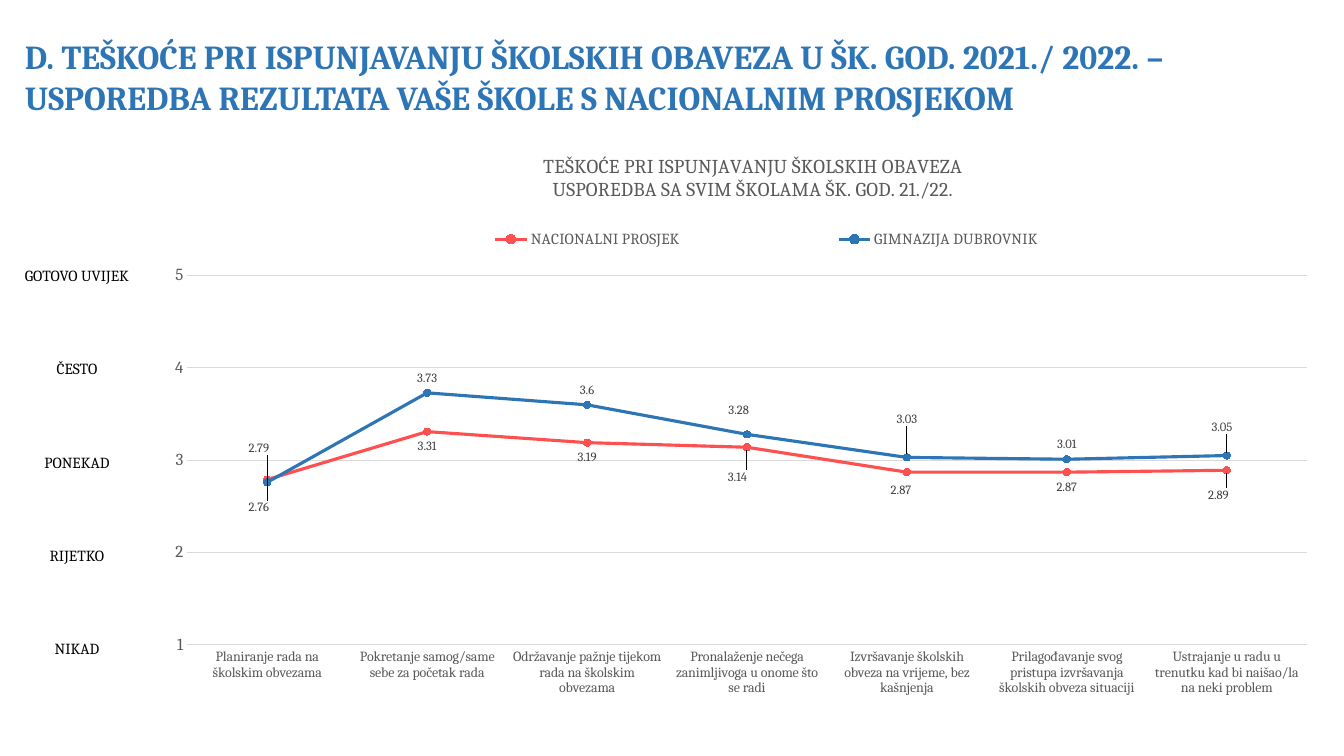
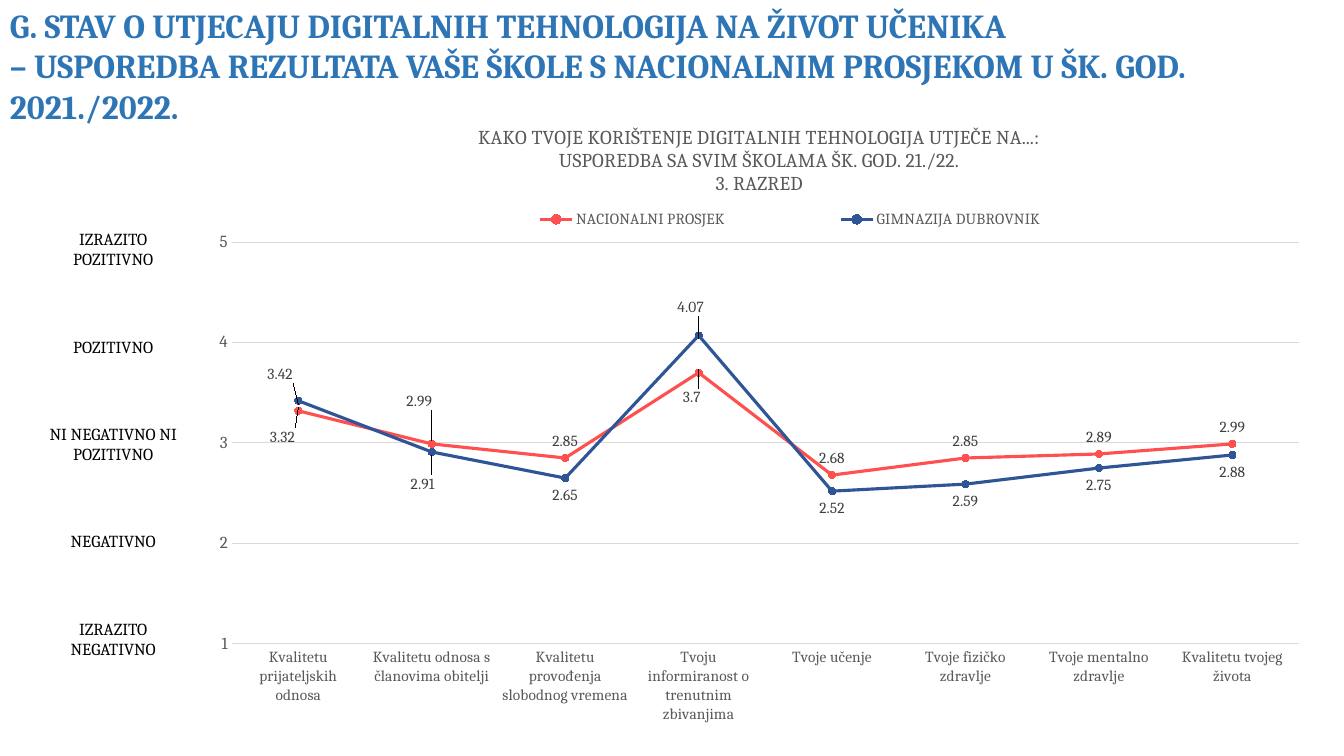
"""Build two survey slides comparing a school's results with the national average."""
from dataclasses import dataclass

from pptx import Presentation
from pptx.chart.chart import Chart
from pptx.chart.data import CategoryChartData
from pptx.chart.series import LineSeries
from pptx.dml.color import RGBColor
from pptx.enum.chart import (XL_CHART_TYPE, XL_LABEL_POSITION, XL_LEGEND_POSITION,
                             XL_MARKER_STYLE, XL_TICK_MARK)
from pptx.enum.text import MSO_AUTO_SIZE, PP_ALIGN
from pptx.oxml import parse_xml
from pptx.oxml.ns import nsdecls, qn
from pptx.slide import Slide
from pptx.text.text import Font
from pptx.util import Cm, Pt

LINE_MARKERS = XL_CHART_TYPE.LINE_MARKERS
ABOVE, BELOW = XL_LABEL_POSITION.ABOVE, XL_LABEL_POSITION.BELOW
LEGEND_TOP = XL_LEGEND_POSITION.TOP
CIRCLE = XL_MARKER_STYLE.CIRCLE
NO_TICK = XL_TICK_MARK.NONE
GROW = MSO_AUTO_SIZE.SHAPE_TO_FIT_TEXT
LEFT, CENTER = PP_ALIGN.LEFT, PP_ALIGN.CENTER


@dataclass(frozen=True)
class Theme:
    font: str = "Cambria"
    blue: str = "2E75B6"
    navy: str = "2F5597"
    red: str = "FF5050"
    black: str = "000000"
    chart_text: str = "595959"
    label_text: str = "404040"
    grid: str = "D9D9D9"
    title_size: float = 24
    chart_title_size: float = 14
    legend_size: float = 11
    value_axis_size: float = 12
    line_width: float = 2.25
    grid_width: float = 0.75
    marker_size: int = 5


THEME = Theme()


@dataclass(frozen=True)
class Box:
    left: float
    top: float
    width: float
    height: float

    def lengths(self) -> tuple[Cm, Cm, Cm, Cm]:
        return Cm(self.left), Cm(self.top), Cm(self.width), Cm(self.height)


@dataclass(frozen=True)
class Scale:
    box: Box
    words: tuple[str, ...]
    size: float
    gap: float


@dataclass(frozen=True)
class Line:
    name: str
    color: str
    values: tuple[float, ...]
    position: XL_LABEL_POSITION
    label_shifts: dict[int, tuple[float, float]]


@dataclass(frozen=True)
class LineChart:
    """Layout values and label shifts are percentages of the chart frame."""
    box: Box
    title: str
    title_layout: tuple[float, ...]
    legend_layout: tuple[float, ...]
    plot_layout: tuple[float, ...]
    categories: tuple[str, ...]
    category_size: float
    label_size: float
    lines: tuple[Line, ...]


@dataclass(frozen=True)
class Page:
    title: str
    title_box: Box
    scale: Scale
    chart: LineChart


NATIONAL, SCHOOL = "NACIONALNI PROSJEK", "GIMNAZIJA DUBROVNIK"

PAGES = (
    Page(
        "D. TEŠKOĆE PRI ISPUNJAVANJU ŠKOLSKIH OBAVEZA U ŠK. GOD. 2021./ 2022. – "
        "USPOREDBA REZULTATA VAŠE ŠKOLE S NACIONALNIM PROSJEKOM",
        Box(0.38, 0.79, 31.7, 2.31),
        Scale(Box(0, 6.58, 3.88, 10.24),
              ("GOTOVO UVIJEK", "ČESTO", "PONEKAD", "RIJETKO", "NIKAD"), 11, 53.5),
        LineChart(
            Box(3.91, 3.23, 29.95, 15.82),
            "TEŠKOĆE PRI ISPUNJAVANJU ŠKOLSKIH OBAVEZA\n"
            "USPOREDBA SA SVIM ŠKOLAMA ŠK. GOD. 21./22.",
            (32.4, 3.5), (15.7, 14.7, 71.5, 6), (2.7, 23.5, 94.2, 58.8),
            ("Planiranje rada na školskim obvezama",
             "Pokretanje samog/same sebe za početak rada",
             "Održavanje pažnje tijekom rada na školskim obvezama",
             "Pronalaženje nečega zanimljivoga u onome što se radi",
             "Izvršavanje školskih obveza na vrijeme, bez kašnjenja",
             "Prilagođavanje svog pristupa izvršavanja školskih obveza situaciji",
             "Ustrajanje u radu u trenutku kad bi naišao/la na neki problem"),
            10, 9,
            (Line(NATIONAL, THEME.red, (2.79, 3.31, 3.19, 3.14, 2.87, 2.87, 2.89), BELOW,
                  {0: (-0.7, -7.3), 3: (-0.8, 2.4), 4: (-0.5, 0.5), 6: (-0.7, 1.6)}),
             Line(SCHOOL, THEME.blue, (2.76, 3.73, 3.6, 3.28, 3.03, 3.01, 3.05), ABOVE,
                  {0: (-0.7, 6.4), 3: (-0.7, -1.4), 4: (0, -3.7), 6: (-0.4, -2.2)})),
        ),
    ),
    Page(
        "G. STAV O UTJECAJU DIGITALNIH TEHNOLOGIJA NA ŽIVOT UČENIKA\n"
        "– USPOREDBA REZULTATA VAŠE ŠKOLE S NACIONALNIM PROSJEKOM U ŠK. GOD. 2021./2022.",
        Box(0, 0, 31.7, 3.33),
        Scale(Box(0.99, 5.64, 3.73, 11.2),
              ("IZRAZITO POZITIVNO", "POZITIVNO", "NI NEGATIVNO NI POZITIVNO",
               "NEGATIVNO", "IZRAZITO NEGATIVNO"), 12, 48),
        LineChart(
            Box(4.72, 2.64, 28.68, 15.8),
            "KAKO TVOJE KORIŠTENJE DIGITALNIH TEHNOLOGIJA UTJEČE NA...:\n"
            "USPOREDBA SA SVIM ŠKOLAMA ŠK. GOD. 21./22.\n3. RAZRED",
            (25.3, 2.7), (21.3, 15.3, 63.4, 6), (3.9, 21.9, 93.8, 64.1),
            ("Kvalitetu prijateljskih odnosa",
             "Kvalitetu odnosa s članovima obitelji",
             "Kvalitetu provođenja slobodnog vremena",
             "Tvoju informiranost o trenutnim zbivanjima",
             "Tvoje učenje",
             "Tvoje fizičko zdravlje",
             "Tvoje mentalno zdravlje",
             "Kvalitetu tvojeg života"),
            11, 11,
            (Line(NATIONAL, THEME.red, (3.32, 2.99, 2.85, 3.7, 2.68, 2.85, 2.89, 2.99), ABOVE,
                  {0: (-1.4, 6.9), 1: (-1.1, -4.1), 3: (-0.6, 6.7)}),
             Line(SCHOOL, THEME.navy, (3.42, 2.91, 2.65, 4.07, 2.52, 2.59, 2.75, 2.88), BELOW,
                  {0: (-1.6, -7), 1: (-0.8, 2.4), 3: (-0.7, -7.2)})),
        ),
    ),
)


def style_font(font: Font, size: float, color: str, bold: bool = False) -> None:
    font.name = THEME.font
    font.size = Pt(size)
    font.bold = bold
    font.color.rgb = RGBColor.from_string(color)


def add_text(slide: Slide, box: Box, text: str, size: float, color: str,
             bold: bool = False, alignment: PP_ALIGN = LEFT, gap: float = 0) -> None:
    text_frame = slide.shapes.add_textbox(*box.lengths()).text_frame
    text_frame.word_wrap = True
    text_frame.auto_size = GROW
    text_frame.text = text
    for index, paragraph in enumerate(text_frame.paragraphs):
        paragraph.alignment = alignment
        paragraph.space_before = Pt(gap if index else 0)
        for run in paragraph.runs:
            style_font(run.font, size, color, bold)


def set_layout(parent, index: int, percents: tuple[float, ...],
               edge: bool = True, inner: bool = False) -> None:
    for layout in parent.findall(qn("c:layout")):
        parent.remove(layout)
    target = '<c:layoutTarget val="inner"/>' if inner else ""
    modes = '<c:xMode val="edge"/><c:yMode val="edge"/>' if edge else ""
    values = "".join(f'<c:{tag} val="{percent / 100:.3f}"/>'
                     for tag, percent in zip("xywh", percents))
    parent.insert(index, parse_xml(
        f'<c:layout {nsdecls("c")}><c:manualLayout>{target}{modes}{values}'
        '</c:manualLayout></c:layout>'))


def style_series(series: LineSeries, line: Line, label_size: float) -> None:
    color = RGBColor.from_string(line.color)
    series.smooth = False
    series.format.line.width = Pt(THEME.line_width)
    series.format.line.color.rgb = color
    series.marker.style = CIRCLE
    series.marker.size = THEME.marker_size
    series.marker.format.fill.solid()
    series.marker.format.fill.fore_color.rgb = color
    series.marker.format.line.color.rgb = color
    labels = series.data_labels
    labels.show_value = True
    labels.position = line.position
    style_font(labels.font, label_size, THEME.label_text)
    for index, shift in line.label_shifts.items():
        label = series.points[index].data_label
        style_font(label.font, label_size, THEME.label_text)
        label.position = line.position
        element = labels._element.xpath(f'c:dLbl[c:idx/@val="{index}"]')[0]
        set_layout(element, 1, shift, edge=False)


def style_axes(chart: Chart, category_size: float) -> None:
    grid_color = RGBColor.from_string(THEME.grid)
    category_axis, value_axis = chart.category_axis, chart.value_axis
    value_axis.minimum_scale, value_axis.maximum_scale = 1, 5
    value_axis.major_unit = 1
    value_axis.has_major_gridlines = True
    for line in (category_axis.format.line, value_axis.major_gridlines.format.line):
        line.color.rgb = grid_color
        line.width = Pt(THEME.grid_width)
    value_axis.format.line.fill.background()
    for axis, size in ((category_axis, category_size), (value_axis, THEME.value_axis_size)):
        axis.major_tick_mark = axis.minor_tick_mark = NO_TICK
        style_font(axis.tick_labels.font, size, THEME.chart_text)


def add_line_chart(slide: Slide, content: LineChart) -> None:
    data = CategoryChartData()
    data.categories = content.categories
    for line in content.lines:
        data.add_series(line.name, line.values)
    chart = slide.shapes.add_chart(LINE_MARKERS, *content.box.lengths(), data).chart
    style_font(chart.font, 10, THEME.black)
    style_axes(chart, content.category_size)
    chart.plots[0].vary_by_categories = False
    for series, line in zip(chart.plots[0].series, content.lines):
        style_series(series, line, content.label_size)

    chart.has_title = True
    title = chart.chart_title
    title.text_frame.text = content.title
    for paragraph in title.text_frame.paragraphs:
        paragraph.alignment = CENTER
        for run in paragraph.runs:
            style_font(run.font, THEME.chart_title_size, THEME.chart_text)
    set_layout(title._element, 1, content.title_layout)

    chart.has_legend = True
    chart.legend.position = LEGEND_TOP
    chart.legend.include_in_layout = False
    style_font(chart.legend.font, THEME.legend_size, THEME.chart_text)
    set_layout(chart.legend._element, 1, content.legend_layout)
    plot_area = chart._chartSpace.xpath("c:chart/c:plotArea")[0]
    set_layout(plot_area, 0, content.plot_layout, inner=True)


def main() -> None:
    presentation = Presentation()
    presentation.slide_width, presentation.slide_height = Cm(33.87), Cm(19.05)
    blank_layout = presentation.slide_layouts[6]
    for page in PAGES:
        slide = presentation.slides.add_slide(blank_layout)
        add_text(slide, page.title_box, page.title, THEME.title_size, THEME.blue, bold=True)
        add_text(slide, page.scale.box, "\n".join(page.scale.words), page.scale.size,
                 THEME.black, alignment=CENTER, gap=page.scale.gap)
        add_line_chart(slide, page.chart)
    presentation.save("out.pptx")


if __name__ == "__main__":
    main()
